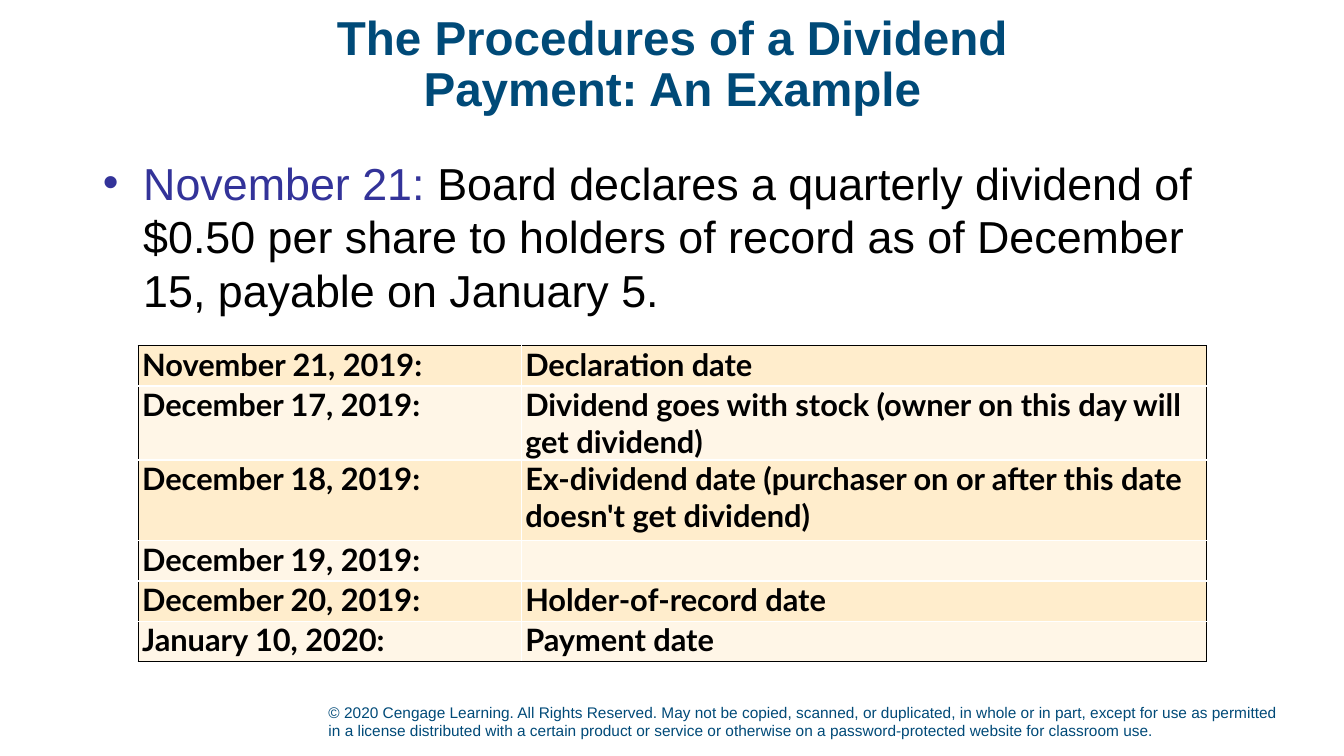
import dataclasses

import pptx
import pptx.dml.color
import pptx.enum.text
import pptx.oxml
import pptx.oxml.ns
import pptx.util

PX = 9144  # EMU in one px, at 100 px to the inch


@dataclasses.dataclass(frozen=True)
class Theme:
    font: str = "Arial"
    table_font: str = "Lato"
    navy: str = "004A78"
    indigo: str = "333399"
    ink: str = "000000"
    rule: str = "FFFFFF"
    bands: tuple = ("FFEDCC", "FFF6E7")
    title_size: int = 34
    body_size: int = 32
    table_size: int = 22
    notice_size: int = 11


THEME = Theme()

SCHEDULE = [
    ("November 21, 2019:", "Declaration date", 40),
    ("December 17, 2019:", "Dividend goes with stock (owner on this day will get dividend)", 73),
    ("December 18, 2019:", "Ex-dividend date (purchaser on or after this date doesn't get dividend)", 80),
    ("December 19, 2019:", "", 40),
    ("December 20, 2019:", "Holder-of-record date", 40),
    ("January 10, 2020:", "Payment date", 40),
]
NOTICE = ("© 2020 Cengage Learning. All Rights Reserved. May not be copied, scanned, or duplicated, "
          "in whole or in part, except for use as permitted in a license distributed with a certain "
          "product or service or otherwise on a password-protected website for classroom use.")


def emu(*lengths):
    return [length * PX for length in lengths]


def rgb(code):
    return pptx.dml.color.RGBColor.from_string(code)


def add_span(para, text, size, color, font=THEME.font, bold=False):
    span = para.add_run()
    span.text = text
    span.font.name = font
    span.font.size = pptx.util.Pt(size)
    span.font.bold = bold
    span.font.color.rgb = rgb(color)


def place(shape, box, anchor):
    shape.left, shape.top, shape.width, shape.height = emu(*box)
    frame = shape.text_frame
    frame.word_wrap = True
    frame.auto_size = pptx.enum.text.MSO_AUTO_SIZE.NONE
    frame.vertical_anchor = anchor
    return frame


def fill_title(page, box):
    frame = place(page.shapes.title, box, pptx.enum.text.MSO_ANCHOR.MIDDLE)
    para = frame.paragraphs[0]
    para.alignment = pptx.enum.text.PP_ALIGN.CENTER
    para.line_spacing = 0.9
    add_span(para, "The Procedures of a Dividend", THEME.title_size, THEME.navy, bold=True)
    para.add_line_break()
    add_span(para, "Payment: An Example", THEME.title_size, THEME.navy, bold=True)


def fill_body(page, box):
    frame = place(page.placeholders[1], box, pptx.enum.text.MSO_ANCHOR.TOP)
    frame.margin_top = 10 * PX
    para = frame.paragraphs[0]
    para.space_before = pptx.util.Pt(0)
    para.space_after = pptx.util.Pt(6)
    # Hanging bullet
    props = para._p.get_or_add_pPr()
    props.set("marL", str(40 * PX))
    props.set("indent", str(-40 * PX))
    bullet = pptx.oxml.parse_xml(f'<a:buChar {pptx.oxml.ns.nsdecls("a")} char="•"/>')
    props.append(bullet)
    add_span(para, "November 21:", THEME.body_size, THEME.indigo)
    add_span(para, " Board declares a quarterly dividend of $0.50 per share to holders of record "
             "as of December 15, payable on January 5.", THEME.body_size, THEME.ink)


def add_borders(cell, outer_sides):
    props = cell._tc.get_or_add_tcPr()
    for side in "LRTB":
        color = THEME.ink if side in outer_sides else THEME.rule
        props.append(pptx.oxml.parse_xml(
            f'<a:ln{side} {pptx.oxml.ns.nsdecls("a")} w="12700"><a:solidFill>'
            f'<a:srgbClr val="{color}"/></a:solidFill></a:ln{side}>'))


def add_schedule(page, box, column_widths):
    table = page.shapes.add_table(len(SCHEDULE), 2, *emu(*box)).table
    table.first_row = table.horz_banding = False
    for column, width in zip(table.columns, column_widths):
        column.width = width * PX
    for index, (date, event, height) in enumerate(SCHEDULE):
        table.rows[index].height = height * PX
        ends = ("T" if index == 0 else "") + ("B" if index == len(SCHEDULE) - 1 else "")
        for side, text in enumerate((date, event)):
            cell = table.cell(index, side)
            cell.margin_left = cell.margin_right = 4 * PX
            cell.margin_top = cell.margin_bottom = 0
            add_borders(cell, "LR"[side] + ends)
            cell.fill.solid()
            cell.fill.fore_color.rgb = rgb(THEME.bands[index % 2])
            if text:
                add_span(cell.text_frame.paragraphs[0], text, THEME.table_size, THEME.ink,
                         THEME.table_font, bold=True)


def add_notice(page, box):
    shape = page.shapes.add_textbox(*emu(*box))
    frame = place(shape, box, pptx.enum.text.MSO_ANCHOR.BOTTOM)
    add_span(frame.paragraphs[0], NOTICE, THEME.notice_size, THEME.navy)


def main():
    deck = pptx.Presentation()
    deck.slide_width, deck.slide_height = emu(1333, 750)
    page = deck.slides.add_slide(deck.slide_layouts[1])
    add_notice(page, (316, 689, 963, 50))
    fill_title(page, (92, 15, 1150, 100))
    fill_body(page, (92, 144, 1150, 187))
    add_schedule(page, (137, 343, 1060, 313), (380, 680))
    deck.save("out.pptx")


if __name__ == "__main__":
    main()
